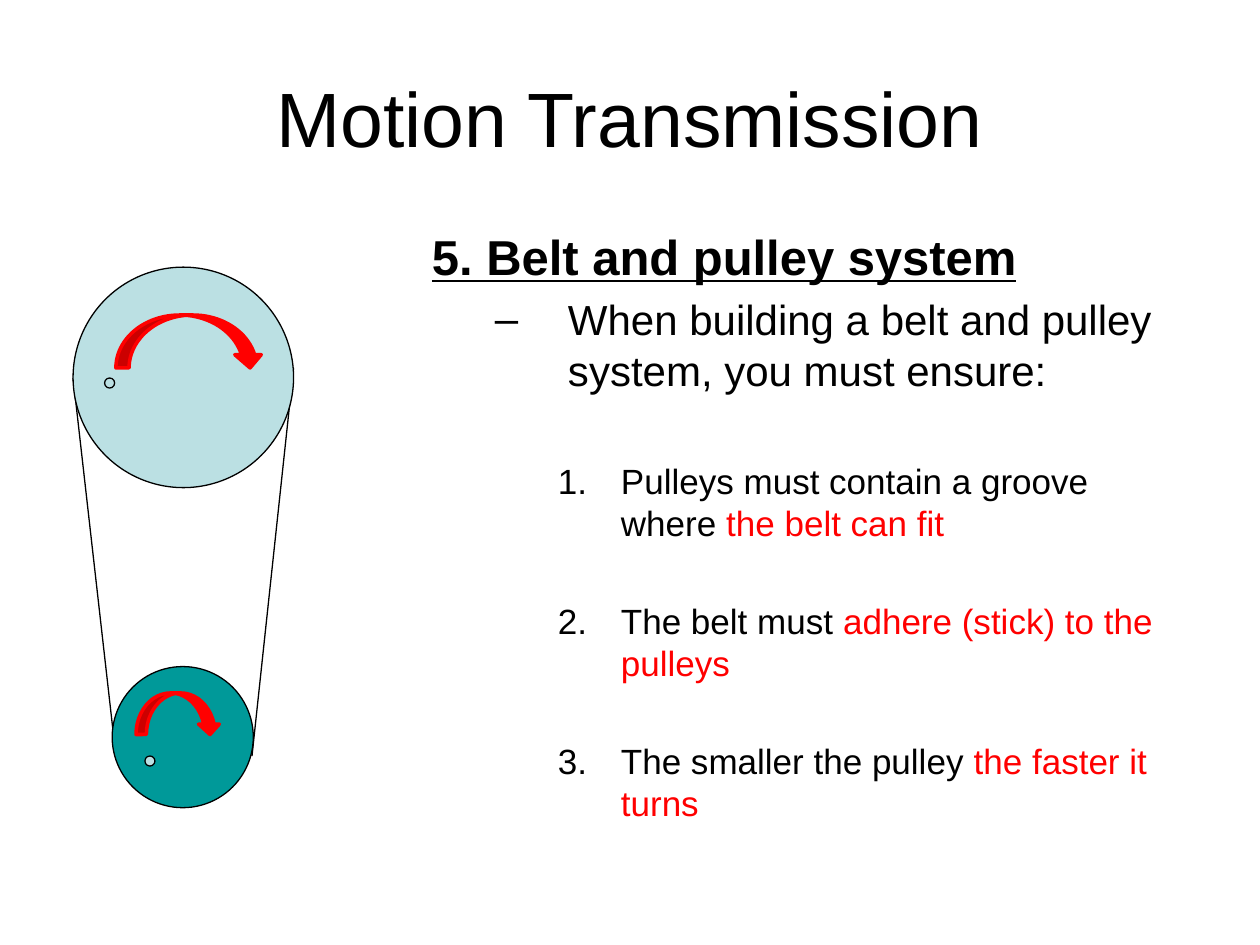
from dataclasses import dataclass

from lxml import etree
from pptx import Presentation
from pptx.dml.color import RGBColor
from pptx.enum.shapes import MSO_CONNECTOR, MSO_SHAPE
from pptx.enum.text import MSO_ANCHOR, PP_ALIGN
from pptx.oxml.ns import qn
from pptx.util import Inches, Pt

OVAL = MSO_SHAPE.OVAL
TURN_ARROW = MSO_SHAPE.CURVED_DOWN_ARROW
STRAIGHT = MSO_CONNECTOR.STRAIGHT
CENTER = PP_ALIGN.CENTER
MIDDLE = MSO_ANCHOR.MIDDLE
TITLE_ONLY = 5


@dataclass(frozen=True)
class Theme:
    font: str = "Arial"
    black: str = "000000"
    red: str = "FF0000"
    pale: str = "BBE0E3"
    teal: str = "009999"
    title: int = 44
    heading: int = 28
    body: int = 24
    item: int = 20
    leading: float = 1.2
    outline: float = 0.75
    arrow_outline: float = 2


THEME = Theme()

REQUIREMENTS = [
    ("Pulleys must contain a groove where ", "the belt can fit"),
    ("The belt must ", "adhere (stick) to the pulleys"),
    ("The smaller the pulley ", "the faster it turns"),
]


def add_span(para, text, size, color=THEME.black, bold=False, underline=False):
    span = para.add_run()
    span.text = text
    font = span.font
    font.name, font.size = THEME.font, Pt(size)
    font.bold, font.underline = bold, underline
    font.color.rgb = RGBColor.from_string(color)


def format_para(para, size, before=0, margin=0, indent=0, bullet=None, **bullet_attributes):
    para.line_spacing = Pt(size * THEME.leading)
    para.space_before = Pt(before)
    properties = para._p.get_or_add_pPr()
    properties.set("marL", str(Inches(margin)))
    properties.set("indent", str(Inches(indent)))
    if bullet:
        etree.SubElement(properties, qn("a:buFont"), typeface=THEME.font)
        etree.SubElement(properties, qn(bullet), **bullet_attributes)


def add_title(slide, text):
    title = slide.shapes.title
    title.left, title.top = Inches(0.5), Inches(0.3)
    title.width, title.height = Inches(9), Inches(1.25)
    title.text_frame.vertical_anchor = MIDDLE
    para = title.text_frame.paragraphs[0]
    para.alignment = CENTER
    add_span(para, text, THEME.title)


def add_body(slide):
    box = slide.shapes.add_textbox(Inches(3.33), Inches(1.75), Inches(6.17), Inches(4.95))
    frame = box.text_frame
    frame.word_wrap = True

    heading = frame.paragraphs[0]
    format_para(heading, THEME.heading)
    add_span(heading, "5. Belt and pulley system", THEME.heading, bold=True, underline=True)

    lead = frame.add_paragraph()
    format_para(lead, THEME.body, 4.8, 1.08, -0.58, "a:buChar", char="–")
    add_span(lead, "When building a belt and pulley system, you must ensure:", THEME.body)

    for number, (start, answer) in enumerate(REQUIREMENTS, 1):
        para = frame.add_paragraph()
        format_para(para, THEME.item, 37 if number == 1 else 32, 1.5, -0.5,
                    "a:buAutoNum", type="arabicPeriod", startAt=str(number))
        add_span(para, start, THEME.item)
        add_span(para, answer, THEME.item, THEME.red)


def add_figure(shapes, kind, left, top, width, height, fill,
               line=THEME.black, weight=THEME.outline):
    shape = shapes.add_shape(kind, Inches(left), Inches(top), Inches(width), Inches(height))
    shape.shadow.inherit = False
    shape.fill.solid()
    shape.fill.fore_color.rgb = RGBColor.from_string(fill)
    shape.line.color.rgb = RGBColor.from_string(line)
    shape.line.width = Pt(weight)


def add_belt(slide, start, end):
    belt = slide.shapes.add_connector(STRAIGHT, *map(Inches, start + end))
    belt.line.color.rgb = RGBColor.from_string(THEME.black)
    belt.line.width = Pt(THEME.outline)
    etree.SubElement(belt._element.spPr, qn("a:effectLst"))


def add_pulley(slide, left, top, size, fill, mark_left, mark_top):
    group = slide.shapes.add_group_shape()
    add_figure(group.shapes, OVAL, left, top, size, size, fill)
    add_figure(group.shapes, OVAL, mark_left, mark_top, 0.08, 0.08, THEME.pale)


def add_turn_arrow(slide, left, top, width, height):
    add_figure(slide.shapes, TURN_ARROW, left, top, width, height,
               THEME.red, THEME.red, THEME.arrow_outline)


def main():
    deck = Presentation()
    deck.slide_width, deck.slide_height = Inches(10), Inches(7.5)
    page = deck.slides.add_slide(deck.slide_layouts[TITLE_ONLY])
    add_title(page, "Motion Transmission")
    add_body(page)
    add_belt(page, (2, 6), (2.33, 2.92))
    add_belt(page, (0.92, 6), (0.58, 3))
    add_pulley(page, 0.58, 2.12, 1.75, THEME.pale, 0.83, 3)
    add_pulley(page, 0.89, 5.29, 1.12, THEME.teal, 1.15, 6)
    add_turn_arrow(page, 0.92, 2.5, 1.17, 0.42)
    add_turn_arrow(page, 1.08, 5.5, 0.67, 0.33)
    deck.save("out.pptx")


if __name__ == "__main__":
    main()
